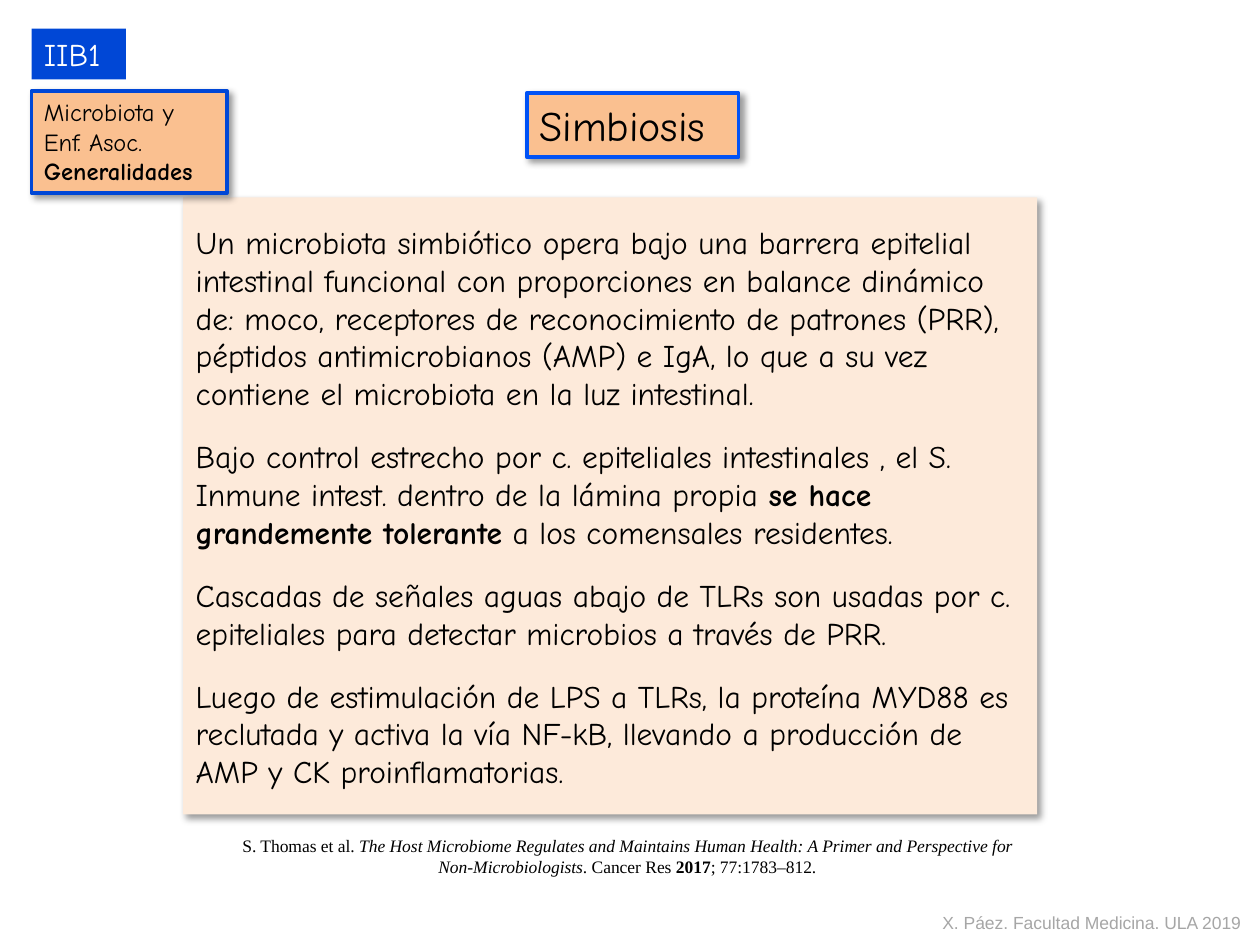
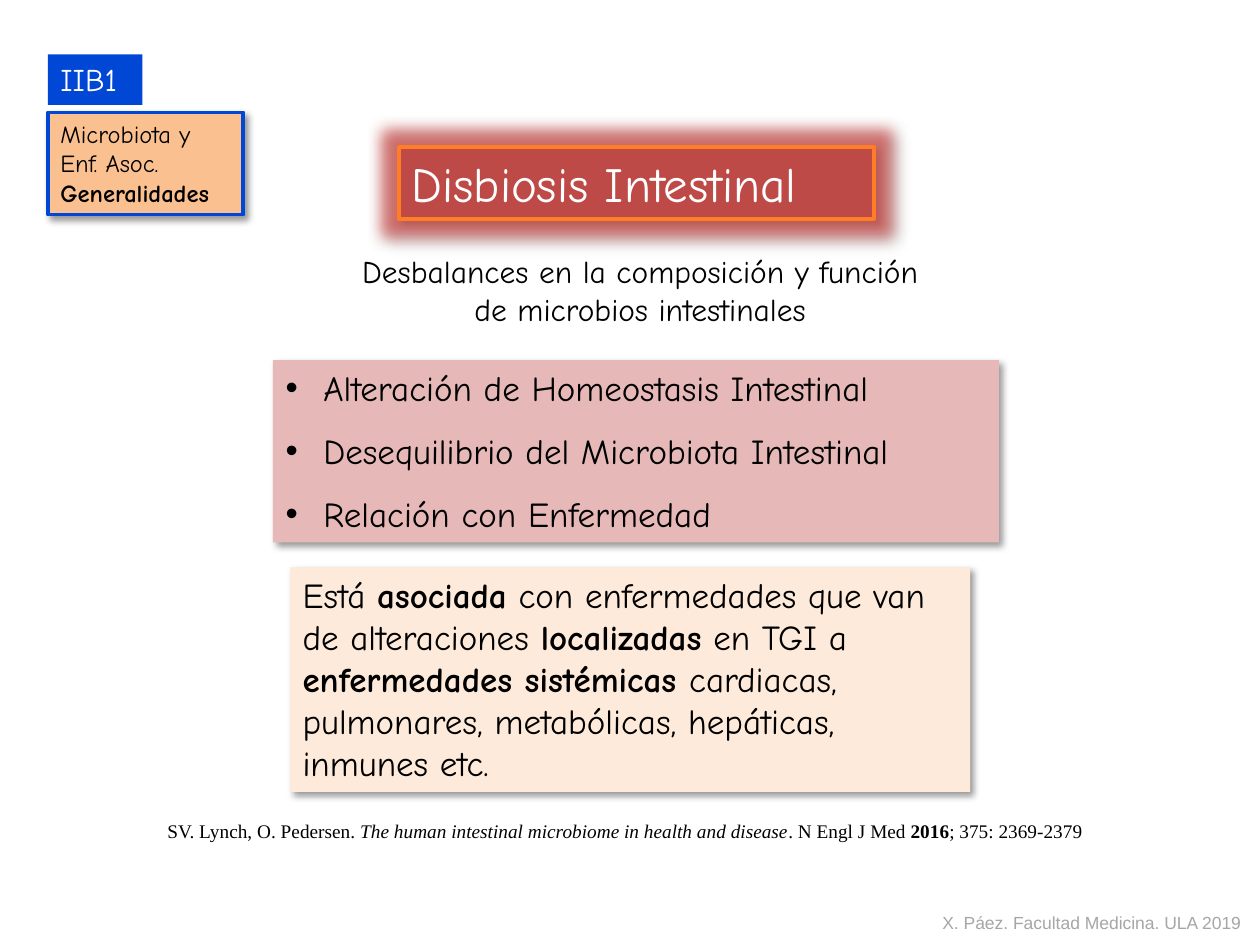
from lxml import etree
from pptx import Presentation
from pptx.dml.color import RGBColor
from pptx.enum.shapes import MSO_SHAPE as Shape
from pptx.enum.text import MSO_ANCHOR as Anchor, MSO_AUTO_SIZE as AutoSize, PP_ALIGN as Align
from pptx.oxml.ns import qn
from pptx.util import Pt

# Shared colours and fonts
BLACK = RGBColor(0x00, 0x00, 0x00)
WHITE = RGBColor(0xFF, 0xFF, 0xFF)
GREY = RGBColor(0xA6, 0xA6, 0xA6)
BLUE = RGBColor(0x00, 0x47, 0xD6)
BRIGHT_BLUE = RGBColor(0x00, 0x52, 0xF6)
PEACH = RGBColor(0xFA, 0xC0, 0x90)
CREAM = RGBColor(0xFD, 0xEA, 0xDA)
ROSE = RGBColor(0xE6, 0xB9, 0xB8)
RED = RGBColor(0xBD, 0x4A, 0x47)
GLOW_RED = RGBColor(0xD0, 0x34, 0x30)
ORANGE = RGBColor(0xFF, 0x7D, 0x25)
HAND, SERIF, SANS = "Comic Neue", "Times New Roman", "Arial"

# Shared content: a paragraph is a string or a list of (text, style) runs
BADGE = ["IIB1"]
TOPIC = ["Microbiota y", "Enf. Asoc.", [("Generalidades", "b")]]
FOOTER = ["X. Páez. Facultad Medicina. ULA 2019"]

# Slide content; boxes are left, top, width, height in points
SLIDES = [
    {
        "badge": (18, 16.4), "topic": (18, 52),
        "title": {"text": ["Simbiosis"], "box": (301, 53.3, 121, 36.3), "size": 24,
                  "fill": PEACH, "line": BRIGHT_BLUE},
        "body": {"text": [
            "Un microbiota simbiótico opera bajo una barrera epitelial intestinal funcional "
            "con proporciones en balance dinámico de: moco, receptores de reconocimiento de "
            "patrones (PRR), péptidos antimicrobianos (AMP) e IgA, lo que a su vez contiene "
            "el microbiota en la luz intestinal.",
            [("Bajo control estrecho por c. epiteliales intestinales , el S. Inmune intest. "
              "dentro de la lámina propia ", ""),
             ("se hace grandemente tolerante", "b"),
             (" a los comensales residentes.", "")],
            "Cascadas de señales aguas abajo de TLRs son usadas por c. epiteliales para "
            "detectar microbios a través de PRR.",
            "Luego de estimulación de LPS a TLRs, la proteína MYD88 es reclutada y activa "
            "la vía NF-kB, llevando a producción de AMP y CK proinflamatorias.",
        ], "box": (104.6, 112.8, 488, 352.6), "size": 18, "fill": CREAM,
            "gap": 14.4, "inset": 14.6},
        "panels": [],
        "notes": [
            {"text": [[
                ("S. Thomas et al. ", ""),
                ("The Host Microbiome Regulates and Maintains Human Health: A Primer and "
                 "Perspective for Non-Microbiologists", "i"),
                (". Cancer Res ", ""), ("2017", "b"), ("; 77:1783–812.", "")]],
             "box": (126, 473.8, 465, 31.7), "size": 10, "font": SERIF, "align": Align.CENTER},
        ],
    },
    {
        "badge": (27.4, 31), "topic": (27.4, 64.3),
        "title": {"text": ["Disbiosis Intestinal"], "box": (228, 84.2, 271.6, 41),
                  "size": 28, "color": WHITE, "fill": RED, "line": ORANGE, "glow": True},
        "body": {"text": [
            "Alteración de Homeostasis Intestinal",
            "Desequilibrio del Microbiota Intestinal",
            "Relación con Enfermedad",
        ], "box": (156, 205.8, 414.8, 104.2), "size": 20, "fill": ROSE,
            "gap": 12, "indent": 21.6},
        "panels": [
            {"text": [[
                ("Está ", ""), ("asociada", "b"),
                (" con enfermedades que van de alteraciones ", ""), ("localizadas", "b"),
                (" en TGI a ", ""), ("enfermedades sistémicas ", "b"),
                ("cardiacas, pulmonares, metabólicas, hepáticas, inmunes etc.", "")]],
             "box": (165.8, 324.2, 388.6, 128.4), "size": 20, "fill": CREAM},
        ],
        "notes": [
            {"text": [[
                ("SV. Lynch, O. Pedersen. ", ""),
                ("The human intestinal microbiome in health and disease", "i"),
                (". N Engl J Med ", ""), ("2016", "b"), ("; 375: 2369-2379", "")]],
             "box": (88.6, 464.4, 542.2, 20.6), "size": 11, "font": SERIF},
            {"text": ["Desbalances en la composición y función", "de microbios intestinales"],
             "box": (185.8, 140.4, 360, 51), "size": 18, "align": Align.CENTER},
        ],
    },
]


def add_effect(effects, tag, color, alpha, **lengths):
    effect = etree.SubElement(effects, qn(f"a:{tag}"),
                              {key: str(value) for key, value in lengths.items()})
    tint = etree.SubElement(effect, qn("a:srgbClr"), val=str(color))
    etree.SubElement(tint, qn("a:alpha"), val=str(alpha * 1000))


def write(frame, part):
    """Fill a text frame with the part's paragraphs."""
    inset = Pt(part.get("inset", 3.6))
    layout = {"word_wrap": True, "auto_size": AutoSize.NONE, "vertical_anchor": Anchor.TOP,
              "margin_left": Pt(7.2), "margin_right": Pt(7.2),
              "margin_top": inset, "margin_bottom": Pt(3.6)}
    for key, value in layout.items():
        setattr(frame, key, value)
    indent = Pt(part.get("indent", 0))
    for index, content in enumerate(part["text"]):
        paragraph = frame.add_paragraph() if index else frame.paragraphs[0]
        paragraph.alignment = part.get("align", Align.LEFT)
        paragraph.space_before = Pt(part.get("gap", 0) if index else 0)
        props = paragraph._p.get_or_add_pPr()
        props.set("marL", str(indent))
        props.set("indent", str(-indent))
        if indent:
            etree.SubElement(props, qn("a:buFont"), typeface=SANS)
            etree.SubElement(props, qn("a:buChar"), char="•")
        else:
            etree.SubElement(props, qn("a:buNone"))
        for words, style in [(content, "")] if isinstance(content, str) else content:
            run = paragraph.add_run()
            run.text = words
            font = {"name": part.get("font", HAND), "size": Pt(part["size"]),
                    "bold": style == "b", "italic": style == "i"}
            for key, value in font.items():
                setattr(run.font, key, value)
            run.font.color.rgb = part.get("color", BLACK)


def dress(shape, part):
    """Place a shape, paint it and write its text."""
    for key, value in zip(("left", "top", "width", "height"), part["box"]):
        setattr(shape, key, Pt(value))
    if "fill" in part:
        shape.fill.solid()
        shape.fill.fore_color.rgb = part["fill"]
        if "line" in part:
            shape.line.color.rgb = part["line"]
            shape.line.width = Pt(2.25)
        else:
            shape.line.fill.background()
        shape.shadow.inherit = False
        effects = shape._element.spPr.find(qn("a:effectLst"))
        if part.get("glow"):
            add_effect(effects, "glow", GLOW_RED, 60, rad=Pt(18))
        if part.get("shadow", True):
            add_effect(effects, "outerShdw", BLACK, 40, blurRad=Pt(4), dist=Pt(3),
                       dir=45 * 60000, algn="tl", rotWithShape=0)
    write(shape.text_frame, part)


def build_slide(deck, content):
    slide = deck.slides.add_slide(deck.slide_layouts[1])
    shapes = slide.shapes

    # Title and main text
    dress(shapes.title, content["title"])
    dress(slide.placeholders[1], content["body"])

    # Panels and the course tags in the corner
    topic = {"text": TOPIC, "box": (*content["topic"], 111.6, 58.3), "size": 14,
             "fill": PEACH, "line": BLUE}
    badge = {"text": BADGE, "box": (*content["badge"], 54, 29), "size": 18,
             "color": WHITE, "fill": BLUE, "shadow": False}
    for part in [*content["panels"], topic, badge]:
        dress(shapes.add_shape(Shape.RECTANGLE, 0, 0, 0, 0), part)

    # Citation, subtitle and footer
    footer = {"text": FOOTER, "box": (531.4, 517.7, 186.5, 19.4), "size": 10,
              "font": SANS, "color": GREY}
    for part in [*content["notes"], footer]:
        dress(shapes.add_textbox(0, 0, 0, 0), part)


def main():
    deck = Presentation()
    deck.slide_width, deck.slide_height = Pt(720), Pt(540)
    for content in SLIDES:
        build_slide(deck, content)
    deck.save("out.pptx")


if __name__ == "__main__":
    main()
